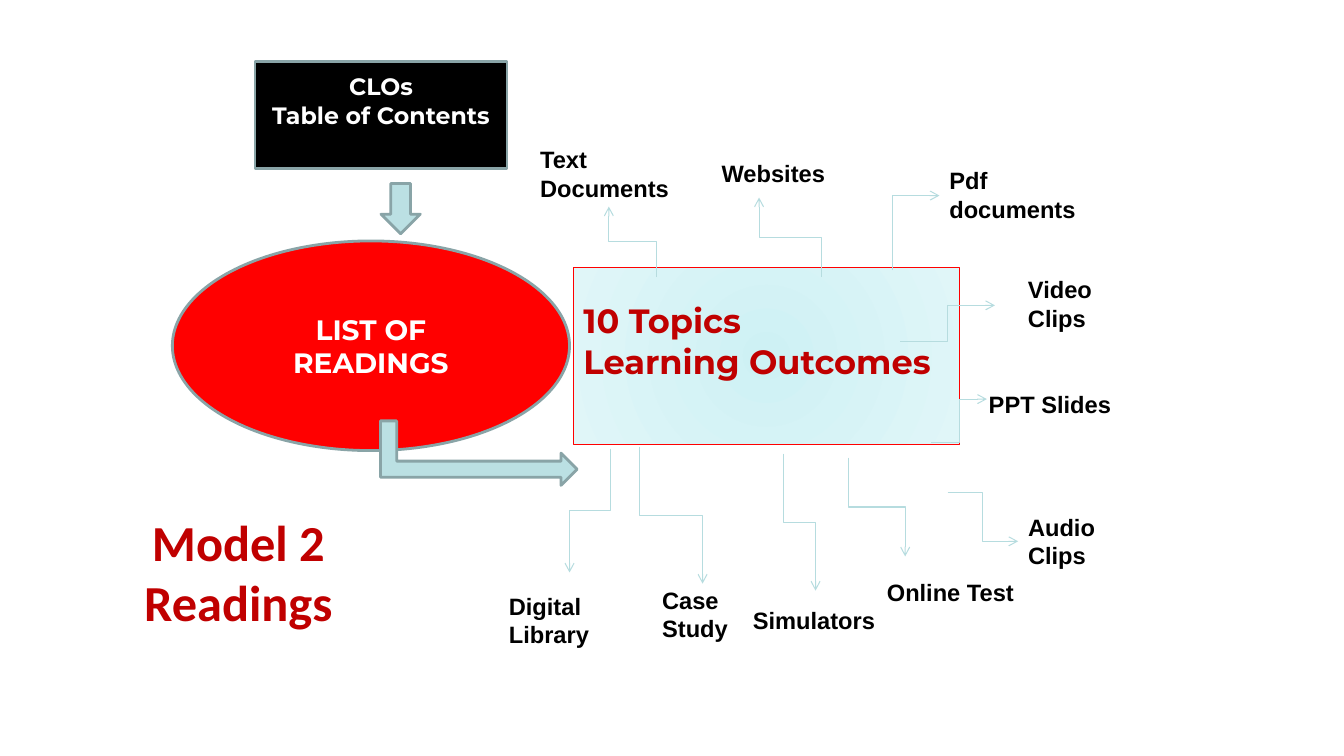
from dataclasses import dataclass

from lxml import etree
from pptx import Presentation
from pptx import util as u
from pptx.dml.color import RGBColor
from pptx.enum import shapes, text
from pptx.oxml.ns import qn

COLS, ROWS = 133.33, 75
WIDE, HIGH = u.Inches(13.33), u.Inches(7.5)


@dataclass(frozen=True)
class Theme:
    """Colours, faces and sizes of the slide."""
    red: str = "FF0000"
    deep: str = "C00000"
    black: str = "000000"
    white: str = "FFFFFF"
    pale: str = "BBE0E3"
    edge: str = "89A4A7"
    wire: str = "B6DCDF"
    glow: tuple = ("CEF1F4", "E0F6F8")
    head: str = "Montserrat"
    body: str = "Arial"
    name: str = "Calibri"
    small: float = 16.9
    mid: float = 20
    large: float = 24
    huge: float = 36
    thin: float = 0.75
    thick: float = 2


T = Theme()
KIND = shapes.MSO_SHAPE
LEFT, MID = text.PP_ALIGN.LEFT, text.PP_ALIGN.CENTER

LABELS = [
    ("Text\nDocuments", 52.6, 13.9, 15.6, 6.7),
    ("Pdf\ndocuments", 93.2, 16, 15.6, 6.7),
    ("PPT Slides", 97.1, 38.2, 16.4, 3.8),
    ("Video\nClips", 101, 26.8, 10.9, 6.7),
    ("Audio Clips", 101, 50.4, 9.4, 6.7),
    ("Online Test", 87, 56.8, 15.6, 3.8),
    ("Simulators", 73.7, 59.6, 15.6, 3.8),
    ("Websites", 70.6, 15.3, 12.5, 3.8),
    ("Case\nStudy", 64.7, 57.6, 9.4, 6.7),
    ("Digital Library", 49.5, 58.2, 12.5, 6.7),
]
ACROSS = [
    (89.3, 33.9, 98.7, 30.3),
    (92.4, 43.9, 97.9, 39.6),
    (94, 48.9, 101, 53.7),
]
UPDOWN = [
    (65.1, 27.5, 60.4, 20.5),
    (81.5, 27.5, 75.3, 19.6),
    (84.2, 45.4, 89.8, 55.2),
    (77.7, 45, 80.9, 58.6),
    (63.4, 44.3, 69.7, 57.9),
    (60.6, 44.5, 56.5, 56.8),
]
CORNER = (88.5, 26.8, 93.2, 19.4)


def grid(x, y):
    """Turn a column and a row into lengths."""
    return round(x / COLS * WIDE), round(y / ROWS * HIGH)


def write(shape, words, face, size, tint, align=LEFT):
    """Put bold paragraphs into a shape."""
    frame = shape.text_frame
    frame.word_wrap = True
    frame.text = words
    for para in frame.paragraphs:
        para.alignment = align
        font = para.font
        font.name, font.size, font.bold = face, u.Pt(size), True
        font.color.rgb = RGBColor.from_string(tint)
    return frame


def label(slide, words, x, y, w, h, face=T.body, size=T.small, tint=T.black,
          align=LEFT):
    """Add a text box."""
    box = slide.shapes.add_textbox(*grid(x, y), *grid(w, h))
    write(box, words, face, size, tint, align)


def block(slide, kind, x, y, w, h, fill, line=T.edge, width=T.thick):
    """Add an outlined shape with a plain fill."""
    shape = slide.shapes.add_shape(kind, *grid(x, y), *grid(w, h))
    shape.shadow.inherit = False
    shape.fill.solid()
    shape.fill.fore_color.rgb = RGBColor.from_string(fill)
    shape.line.color.rgb = RGBColor.from_string(line)
    shape.line.width = u.Pt(width)
    return shape


def shine(shape, tints):
    """Give a shape a round gradient from its centre."""
    shape.fill.gradient()
    for stop, tint in zip(shape.fill.gradient_stops, tints):
        stop.color.rgb = RGBColor.from_string(tint)
    grad = shape._element.spPr.find(qn("a:gradFill"))
    grad.remove(grad.find(qn("a:lin")))
    ring = etree.SubElement(grad, qn("a:path"), {"path": "circle"})
    sides = dict.fromkeys("ltrb", "50000")
    etree.SubElement(ring, qn("a:fillToRect"), sides)


def wire(slide, x1, y1, x2, y2):
    """Add an elbow arrow that leaves sideways."""
    link = slide.shapes.add_connector(
        shapes.MSO_CONNECTOR.ELBOW, *grid(x1, y1), *grid(x2, y2))
    link.line.color.rgb = RGBColor.from_string(T.wire)
    link.line.width = u.Pt(T.thin)
    props = link._element.spPr
    etree.SubElement(props.find(qn("a:ln")), qn("a:tailEnd"), {"type": "arrow"})
    etree.SubElement(props, qn("a:effectLst"))
    return props


def turn(slide, x1, y1, x2, y2):
    """Add an elbow arrow that leaves up or down, by a quarter turn."""
    dx, dy = x2 - x1, y2 - y1
    cx, cy = (x1 + x2) / 2, (y1 + y2) / 2
    same = dx * dy > 0
    a, b = (dy / 2, dx / 2) if same else (-dy / 2, -dx / 2)
    props = wire(slide, cx + a, cy - b, cx - a, cy + b)
    angle = 270 if same else 90
    props.find(qn("a:xfrm")).set("rot", str(angle * 60000))
    return props


def main():
    """Build the slide and save it."""
    deck = Presentation()
    deck.slide_width, deck.slide_height = WIDE, HIGH
    slide = deck.slides.add_slide(deck.slide_layouts[6])

    topics = block(slide, KIND.RECTANGLE, 56.9, 26.5, 38.3, 17.6, T.pale,
                   T.red, T.thin)
    shine(topics, T.glow)
    frame = write(topics, "10 Topics\nLearning Outcomes", T.head, T.large,
                  T.deep)
    frame.vertical_anchor = text.MSO_ANCHOR.TOP
    frame.margin_top = u.Inches(0.33)

    for item in LABELS:
        label(slide, *item)
    for ends in ACROSS:
        wire(slide, *ends)
    for ends in UPDOWN:
        turn(slide, *ends)
    turn(slide, *CORNER).find(qn("a:prstGeom")).set("prst", "bentConnector2")

    oval = block(slide, KIND.OVAL, 17.1, 23.9, 39.4, 20.8, T.red)
    write(oval, "LIST OF\nREADINGS", T.head, T.mid, T.white, MID)
    block(slide, KIND.DOWN_ARROW, 37.8, 18.2, 3.9, 5, T.pale)
    block(slide, KIND.BENT_UP_ARROW, 44.3, 35.2, 6.4, 19.5, T.pale).rotation = 90
    clos = block(slide, KIND.RECTANGLE, 25.3, 6.1, 25, 10.6, T.black)
    frame = write(clos, "CLOs\nTable of Contents", T.head, T.small, T.white, MID)
    frame.margin_bottom = u.Inches(0.33)

    label(slide, "Model 2\nReadings", 13.2, 50.2, 20.9, 13.1, T.name, T.huge,
          T.deep, MID)
    deck.save("out.pptx")


if __name__ == "__main__":
    main()
